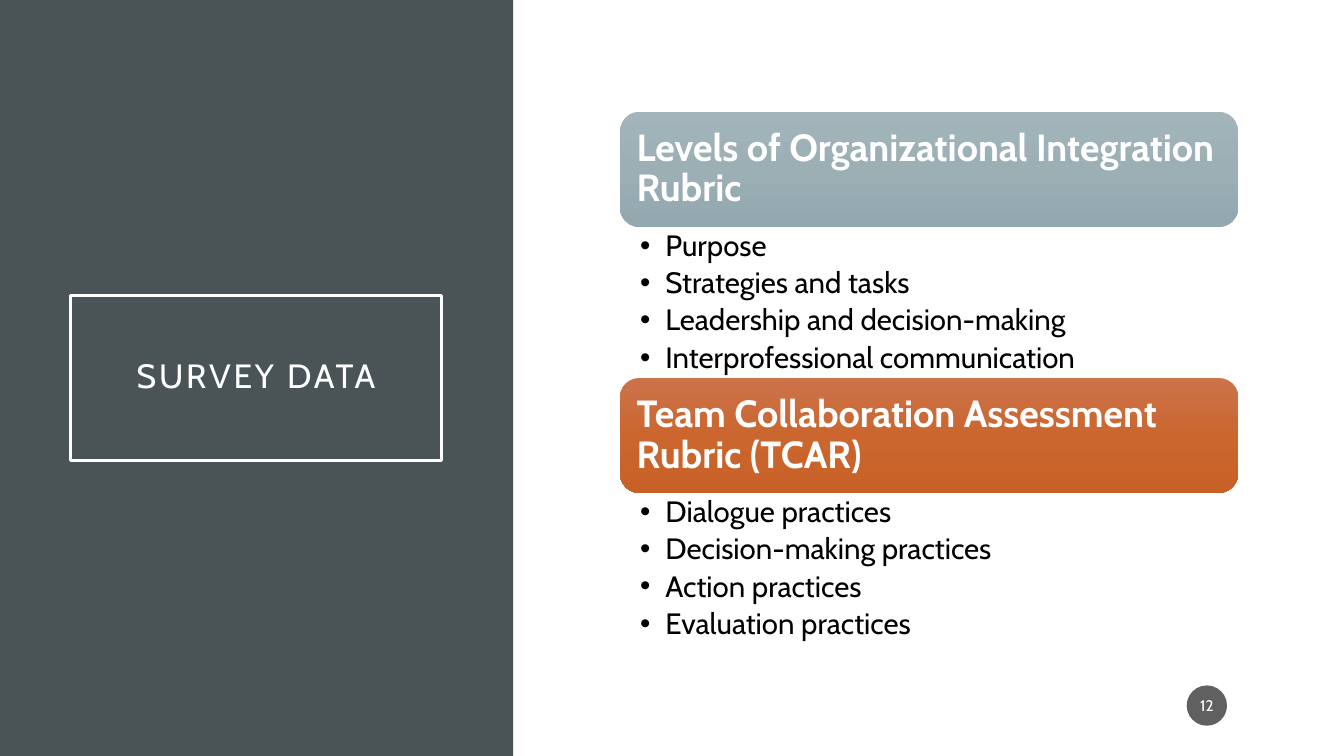
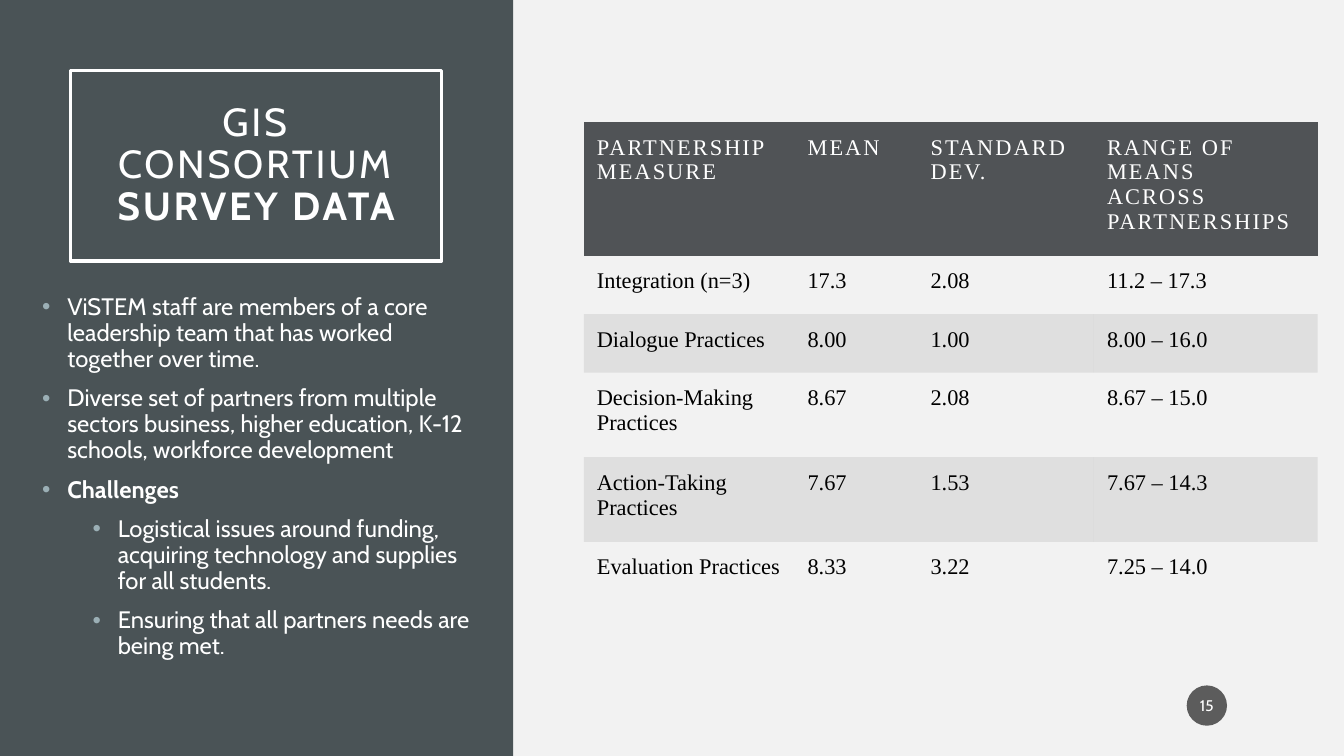
from copy import deepcopy

from lxml import etree
from pptx import Presentation
from pptx.dml.color import RGBColor
from pptx.enum.shapes import MSO_SHAPE
from pptx.enum.text import MSO_ANCHOR, PP_ALIGN
from pptx.oxml.ns import qn
from pptx.util import Inches, Pt

RECTANGLE = MSO_SHAPE.RECTANGLE
ROUNDED = MSO_SHAPE.ROUNDED_RECTANGLE
OVAL = MSO_SHAPE.OVAL
LEFT, CENTER = PP_ALIGN.LEFT, PP_ALIGN.CENTER
TOP, MIDDLE = MSO_ANCHOR.TOP, MSO_ANCHOR.MIDDLE

WHITE = RGBColor(0xFF, 0xFF, 0xFF)
BLACK = RGBColor(0x00, 0x00, 0x00)
PALE_GRAY = RGBColor(0xF2, 0xF2, 0xF2)
SLATE = RGBColor(0x4A, 0x53, 0x56)
HEADER_GRAY = RGBColor(0x50, 0x53, 0x56)
BADGE_GRAY = RGBColor(0x1D, 0x1D, 0x1D)
MIST = RGBColor(0x9B, 0xAF, 0xB5)
MIST_GRADIENT = (RGBColor(0xA3, 0xB5, 0xBB), MIST, RGBColor(0x93, 0xA9, 0xAF))
RUST_GRADIENT = (
    RGBColor(0xCC, 0x73, 0x4B),
    RGBColor(0xCB, 0x66, 0x2F),
    RGBColor(0xC8, 0x61, 0x28),
)

SANS = "Cabin"
SERIF = "Times New Roman"
PLAIN_TABLE_STYLE = "{2D5ABB26-0587-4C30-8999-92F81FD0307C}"


class Deck:
    def __init__(self):
        self.presentation = Presentation()
        self.presentation.slide_width = Inches(13.33)
        self.presentation.slide_height = Inches(7.5)
        self.slide = None

    def new_slide(self, background, number):
        self.slide = self.presentation.slides.add_slide(self.presentation.slide_layouts[6])
        self.slide.background.fill.solid()
        self.slide.background.fill.fore_color.rgb = background
        panel = self.shape(RECTANGLE, 0, 0, 5.09, 7.5)
        self.paint(panel.fill, SLATE)
        self.badge(number)

    def shape(self, preset, left, top, width, height):
        shape = self.slide.shapes.add_shape(
            preset, Inches(left), Inches(top), Inches(width), Inches(height)
        )
        shape.shadow.inherit = False
        shape.fill.background()
        shape.line.fill.background()
        return shape

    def paint(self, fill, color):
        fill.solid()
        fill.fore_color.rgb = color

    def set_opacity(self, element, percent):
        color = element.find(".//" + qn("a:srgbClr"))
        etree.SubElement(color, qn("a:alpha"), val=str(percent * 1000))

    def frame(self, frame, anchor, across, down):
        frame.word_wrap = True
        frame.vertical_anchor = anchor
        frame.margin_left = frame.margin_right = Inches(across)
        frame.margin_top = frame.margin_bottom = Inches(down)

    def style(self, paragraph, size, color, font=SANS, bold=None, align=LEFT, spacing=0.9, tracking=0):
        paragraph.alignment = align
        paragraph.line_spacing = spacing
        paragraph.font.size = Pt(size)
        paragraph.font.name = font
        paragraph.font.color.rgb = color
        paragraph.font.bold = bold
        if tracking:
            paragraph._p.pPr.find(qn("a:defRPr")).set("spc", str(int(tracking * 100)))

    def bullet(self, paragraph, indent, color):
        properties = paragraph._p.get_or_add_pPr()
        properties.set("marL", str(Inches(indent)))
        properties.set("indent", str(Inches(-0.25)))
        tint = etree.SubElement(properties, qn("a:buClr"))
        etree.SubElement(tint, qn("a:srgbClr"), val=str(color))
        etree.SubElement(properties, qn("a:buFont"), typeface="Arial")
        etree.SubElement(properties, qn("a:buChar"), char="•")

    def title(self, top, height, size, text, strong=""):
        box = self.shape(RECTANGLE, 0.7, top, 3.68, height)
        box.line.color.rgb = WHITE
        box.line.width = Pt(2.5)
        self.frame(box.text_frame, MIDDLE, 0.2, 0.2)
        heading = box.text_frame.paragraphs[0]
        heading.add_run().text = text
        if strong:
            emphasis = heading.add_run()
            emphasis.text = strong
            emphasis.font.bold = True
        self.style(heading, size, WHITE, align=CENTER, tracking=2)

    def badge(self, number):
        circle = self.shape(OVAL, 11.77, 6.8, 0.4, 0.4)
        self.paint(circle.fill, BADGE_GRAY)
        self.set_opacity(circle._element.spPr, 70)
        self.frame(circle.text_frame, MIDDLE, 0.02, 0.05)
        label = circle.text_frame.paragraphs[0]
        label.text = str(number)
        self.style(label, 11, WHITE, align=CENTER, spacing=1.0)

    def banner(self, top, text, gradient):
        bar = self.shape(ROUNDED, 6.15, top, 6.13, 1.14)
        bar.fill.gradient()
        bar.fill.gradient_angle = 270
        stops = bar._element.spPr.find(".//" + qn("a:gsLst"))
        stops.insert(1, deepcopy(stops[0]))
        for stop, color, position in zip(bar.fill.gradient_stops, gradient, (0, 0.5, 1)):
            stop.color.rgb = color
            stop.position = position
        self.frame(bar.text_frame, MIDDLE, 0.11, 0.11)
        heading = bar.text_frame.paragraphs[0]
        heading.text = text
        self.style(heading, 27, WHITE, bold=True)

    def bullets(self, box, margins, items, size, color, bullet_color, indent, before=0, after=0):
        area = self.slide.shapes.add_textbox(*(Inches(length) for length in box))
        self.frame(area.text_frame, TOP, *margins)
        for index, (text, level, bold) in enumerate(items):
            body = area.text_frame
            item = body.add_paragraph() if index else body.paragraphs[0]
            item.text = text
            item.level = level
            self.bullet(item, indent + 0.5 * level, bullet_color)
            item.space_before = Pt(before)
            item.space_after = Pt(after)
            self.style(item, size, color, bold=bold)

    def table(self, left, top, widths, heights, rows):
        graphic = self.slide.shapes.add_table(
            len(rows), len(widths), Inches(left), Inches(top),
            Inches(sum(widths)), Inches(sum(heights)),
        )
        grid = graphic.table
        grid._tbl.tblPr.find(qn("a:tableStyleId")).text = PLAIN_TABLE_STYLE
        grid.horz_banding = False
        for column, width in zip(grid.columns, widths):
            column.width = Inches(width)
        for index, (row, height, values) in enumerate(zip(grid.rows, heights, rows)):
            row.height = Inches(height)
            for cell, value in zip(row.cells, values):
                self.cell(cell, value, index)

    def cell(self, cell, value, row_index):
        is_header = row_index == 0
        cell.text = value
        cell.margin_left = cell.margin_right = Inches(0.13)
        cell.margin_top = cell.margin_bottom = Inches(0.13)
        if is_header:
            self.paint(cell.fill, HEADER_GRAY)
        elif row_index % 2 == 0:
            self.paint(cell.fill, BLACK)
            self.set_opacity(cell._tc.tcPr, 8)
        else:
            cell.fill.background()
        for paragraph in cell.text_frame.paragraphs:
            self.style(
                paragraph, 16, WHITE if is_header else BLACK, font=SERIF,
                spacing=1.0, tracking=1.5 if is_header else 0,
            )


RUBRICS = (
    (
        "Levels of Organizational Integration Rubric",
        MIST_GRADIENT,
        ("Purpose", "Strategies and tasks", "Leadership and decision-making",
         "Interprofessional communication"),
    ),
    (
        "Team Collaboration Assessment Rubric (TCAR)",
        RUST_GRADIENT,
        ("Dialogue practices", "Decision-making practices", "Action practices",
         "Evaluation practices"),
    ),
)

CONSORTIUM_NOTES = (
    ("ViSTEM staff are members of a core leadership team that has worked together over time.", 0, None),
    ("Diverse set of partners from multiple sectors business, higher education, K-12 schools, "
     "workforce development", 0, None),
    ("Challenges", 0, True),
    ("Logistical issues around funding, acquiring technology and supplies for all students.", 1, None),
    ("Ensuring that all partners needs are being met.", 1, None),
)

SURVEY_ROWS = (
    ("PARTNERSHIP MEASURE", "MEAN", "STANDARD DEV.", "RANGE OF MEANS\nACROSS PARTNERSHIPS"),
    ("Integration (n=3)", "17.3", "2.08", "11.2 – 17.3"),
    ("Dialogue Practices", "8.00", "1.00", "8.00 – 16.0"),
    ("Decision-Making Practices", "8.67", "2.08", "8.67 – 15.0"),
    ("Action-Taking Practices", "7.67", "1.53", "7.67 – 14.3"),
    ("Evaluation Practices", "8.33", "3.22", "7.25 – 14.0"),
)


def main():
    deck = Deck()

    deck.new_slide(WHITE, 12)
    deck.title(2.93, 1.64, 24, "SURVEY DATA")
    for index, (heading, gradient, topics) in enumerate(RUBRICS):
        top = 1.11 + 2.64 * index
        deck.banner(top, heading, gradient)
        deck.bullets(
            (6.15, top + 1.14, 6.13, 1.5), (0.2, 0.04),
            [(topic, 0, None) for topic in topics],
            21, BLACK, BLACK, indent=0.25, after=4,
        )

    deck.new_slide(PALE_GRAY, 15)
    deck.title(0.7, 1.89, 28, "GIS CONSORTIUM ", "SURVEY DATA")
    deck.bullets(
        (0.26, 2.88, 4.61, 3.74), (0.1, 0.05), CONSORTIUM_NOTES,
        17, WHITE, MIST, indent=0.31, before=10,
    )
    deck.table(
        5.79, 1.21, (2.09, 1.22, 1.75, 2.22),
        (1.22, 0.58, 0.58, 0.84, 0.84, 0.84), SURVEY_ROWS,
    )

    deck.presentation.save("out.pptx")


if __name__ == "__main__":
    main()
